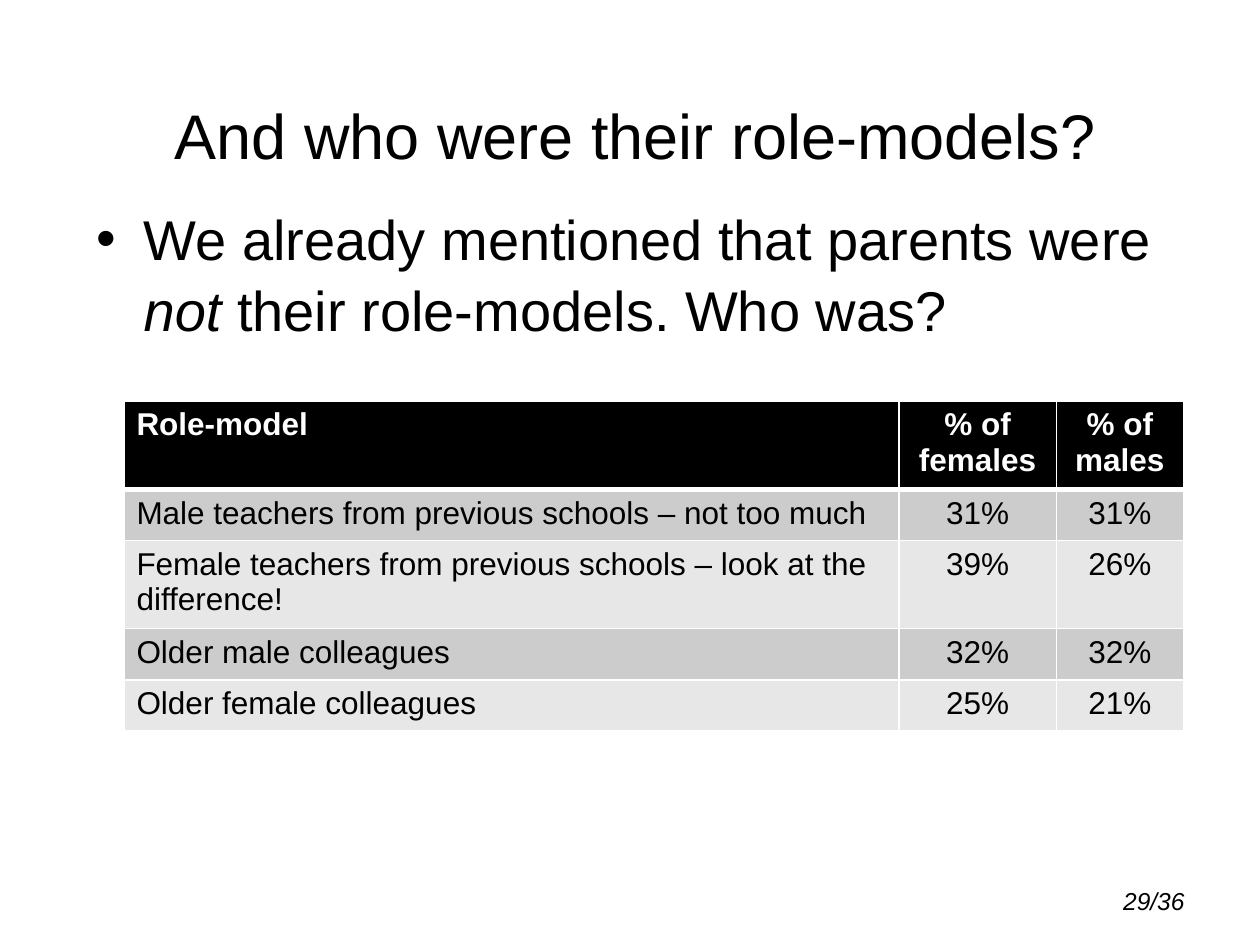
from lxml.etree import SubElement
from pptx import Presentation
from pptx.dml.color import RGBColor
from pptx.enum.text import MSO_ANCHOR, PP_ALIGN
from pptx.oxml.ns import qn
from pptx.util import Pt

BLACK, WHITE = "000000", "FFFFFF"
BANDS = ("CCCCCC", "E7E7E7")


def color(hex_string):
    return RGBColor.from_string(hex_string)


class SlideBuilder:
    font_name = "Arial"

    def __init__(self, slide):
        self.slide = slide

    def add_run(self, paragraph, text, size, text_color=BLACK, bold=False, italic=False):
        run = paragraph.add_run()
        run.text = text
        font = run.font
        font.name, font.size = self.font_name, Pt(size)
        font.bold, font.italic = bold, italic
        font.color.rgb = color(text_color)

    def add_text(self, box, runs, size, alignment=PP_ALIGN.LEFT,
                 anchor=MSO_ANCHOR.TOP, top_margin=3.6):
        """Runs are (text, italic) pairs; the new paragraph is returned."""
        shape = self.slide.shapes.add_textbox(*map(Pt, box))
        frame = shape.text_frame
        frame.word_wrap = True
        frame.vertical_anchor = anchor
        frame.margin_top = Pt(top_margin)
        paragraph = frame.paragraphs[0]
        paragraph.alignment = alignment
        for text, italic in runs:
            self.add_run(paragraph, text, size, italic=italic)
        return paragraph

    def add_bullet(self, paragraph, indent):
        properties = paragraph._p.get_or_add_pPr()
        properties.set("marL", str(Pt(indent)))
        properties.set("indent", str(-Pt(indent)))
        SubElement(properties, qn("a:buFont"), typeface=self.font_name)
        SubElement(properties, qn("a:buChar"), char="•")

    def set_borders(self, cell, widths):
        properties = cell._tc.get_or_add_tcPr()
        for position, (side, width) in enumerate(widths.items()):
            line = properties.makeelement(qn(f"a:{side}"), {"w": str(Pt(width))})
            fill = SubElement(line, qn("a:solidFill"))
            SubElement(fill, qn("a:srgbClr"), val=WHITE)
            properties.insert(position, line)

    def add_table(self, left, top, column_widths, row_height, rows, size):
        shape = self.slide.shapes.add_table(
            len(rows), len(column_widths), Pt(left), Pt(top),
            Pt(sum(column_widths)), Pt(row_height * len(rows)))
        table = shape.table
        for column, width in zip(table.columns, column_widths):
            column.width = Pt(width)
        for row_index, values in enumerate(rows):
            table.rows[row_index].height = Pt(row_height)
            header = row_index == 0
            for column_index, value in enumerate(values):
                cell = table.cell(row_index, column_index)
                cell.fill.solid()
                cell.fill.fore_color.rgb = color(
                    BLACK if header else BANDS[(row_index - 1) % 2])
                self.set_borders(cell, {
                    "lnL": 1, "lnR": 1,
                    "lnT": 3 if row_index == 1 else 1,
                    "lnB": 3 if header else 1})
                frame = cell.text_frame
                for line_index, line in enumerate(value.split("\n")):
                    paragraph = frame.add_paragraph() if line_index else frame.paragraphs[0]
                    paragraph.alignment = PP_ALIGN.CENTER if column_index else PP_ALIGN.LEFT
                    self.add_run(paragraph, line, size,
                                 WHITE if header else BLACK, bold=header)


def main():
    presentation = Presentation()
    presentation.slide_width, presentation.slide_height = Pt(720), Pt(540)
    slide = presentation.slides.add_slide(presentation.slide_layouts[6])
    builder = SlideBuilder(slide)

    # Title
    builder.add_text((60, 48, 606, 63.6), [("And who were their role-models?", False)],
                     36, PP_ALIGN.CENTER, top_margin=7.2)

    # Introduction
    introduction = builder.add_text(
        (48, 111.6, 641, 391),
        [("We already mentioned that parents were ", False), ("not", True),
         (" their role-models. Who was?", False)], 32)
    introduction.line_spacing = 1.05
    builder.add_bullet(introduction, 27)

    # Role-model table
    builder.add_table(70.8, 229.2, (442.8, 90, 72.6), 29.2, [
        ("Role-model", "% of\nfemales", "% of\nmales"),
        ("Male teachers from previous schools – not too much", "31%", "31%"),
        ("Female teachers from previous schools – look at the difference!", "39%", "26%"),
        ("Older male colleagues", "32%", "32%"),
        ("Older female colleagues", "25%", "21%"),
    ], 18)

    # Page number
    builder.add_text((516, 500.4, 168, 28.8), [("29/36", True)], 14,
                     PP_ALIGN.RIGHT, MSO_ANCHOR.MIDDLE)

    presentation.save("out.pptx")


if __name__ == "__main__":
    main()
